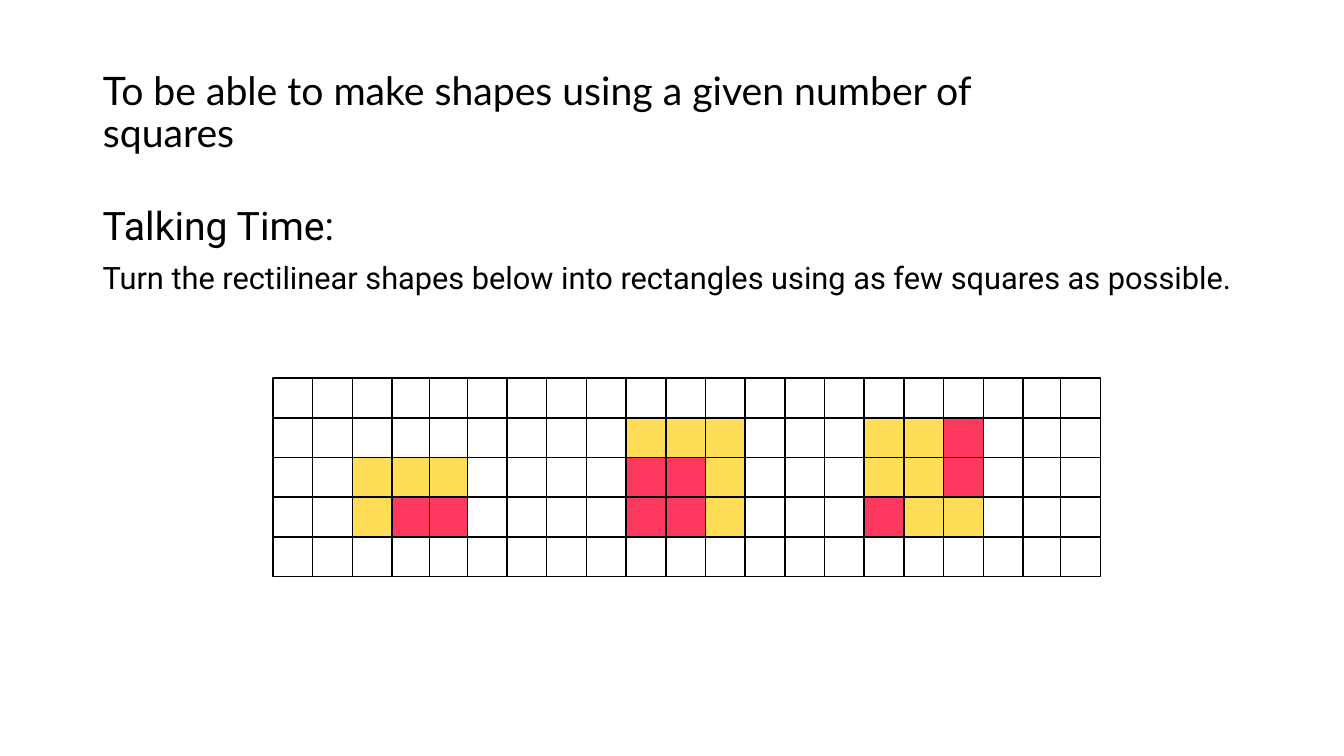
from pptx import Presentation
from pptx.dml.color import RGBColor
from pptx.enum.shapes import MSO_SHAPE
from pptx.enum.text import MSO_ANCHOR, MSO_AUTO_SIZE, PP_ALIGN
from pptx.util import Cm, Pt

HUES = {"ink": "000000", ".": "FFFFFF", "Y": "FFDD57", "R": "FF3860"}

# One letter per square: Y yellow, R red, . white
GRID = [
    ".....................",
    ".........YYY...YYR...",
    "..YYY....RRY...YYR...",
    "..YRR....RRY...RYY...",
    ".....................",
]
SIDE = 1
LEFT, TOP = 6.88, 9.53
TIGHT = (4, 5, 20)  # columns that overlap the one before
LAP = 0.05


def hue(key):
    return RGBColor.from_string(HUES[key])


def set_frame(frame, anchor):
    frame.word_wrap = True
    frame.auto_size = MSO_AUTO_SIZE.NONE
    frame.vertical_anchor = anchor


def add_text(para, text, font, size, before=0):
    para.alignment = PP_ALIGN.LEFT
    para.line_spacing = 0.9
    para.space_before = Pt(before)
    run = para.add_run()
    run.text = text
    run.font.name = font
    run.font.size = Pt(size)
    run.font.color.rgb = hue("ink")


def set_title(slide, text):
    title = slide.shapes.title
    title.left, title.top = Cm(2.34), Cm(1.02)
    title.width, title.height = Cm(24.38), Cm(3.68)
    set_frame(title.text_frame, MSO_ANCHOR.MIDDLE)
    add_text(title.text_frame.paragraphs[0], text, "Lato", 28)


def add_task(slide, head, task):
    box = slide.shapes.add_textbox(Cm(2.34), Cm(5.08), Cm(30.43), Cm(12.09))
    frame = box.text_frame
    set_frame(frame, MSO_ANCHOR.TOP)
    add_text(frame.paragraphs[0], head, "Roboto", 28)
    add_text(frame.add_paragraph(), task, "Roboto", 22, before=10)


def add_square(slide, left, top, key):
    square = slide.shapes.add_shape(
        MSO_SHAPE.RECTANGLE, Cm(left), Cm(top), Cm(SIDE), Cm(SIDE))
    square.shadow.inherit = False
    square.fill.solid()
    square.fill.fore_color.rgb = hue(key)
    square.line.color.rgb = hue("ink")
    square.line.width = Pt(1)


def add_grid(slide):
    for row, keys in enumerate(GRID):
        for col, key in enumerate(keys):
            laps = sum(col >= tight for tight in TIGHT)
            add_square(slide, LEFT + col * SIDE - laps * LAP,
                       TOP + row * SIDE, key)


def main():
    deck = Presentation()
    deck.slide_width, deck.slide_height = Cm(33.87), Cm(19.05)
    slide = deck.slides.add_slide(deck.slide_layouts.get_by_name("Title Only"))
    set_title(slide, "To be able to make shapes using a given number of squares")
    add_task(slide, "Talking Time:",
             "Turn the rectilinear shapes below into rectangles "
             "using as few squares as possible.")
    add_grid(slide)
    deck.save("out.pptx")


if __name__ == "__main__":
    main()
